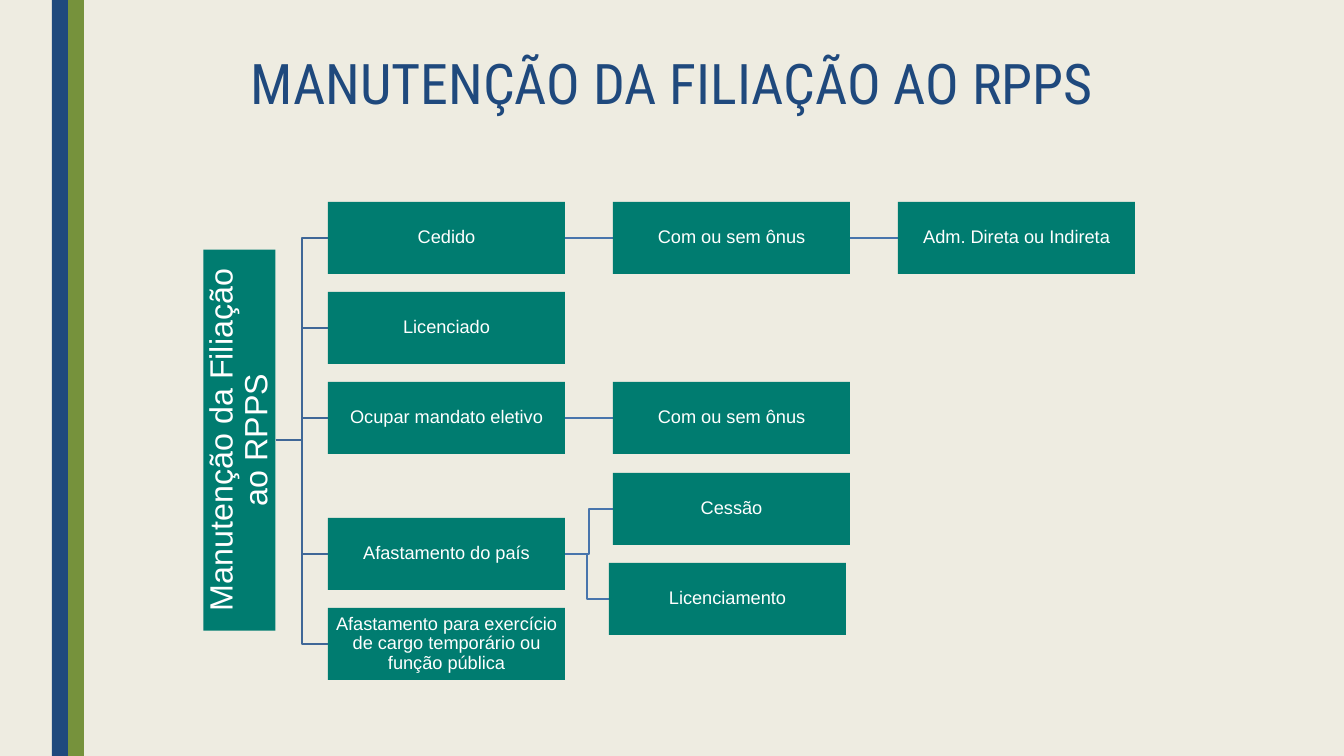
import pptx
import pptx.util
import pptx.dml.color
import pptx.enum.shapes
import pptx.enum.text

EMU_PER_PX = 914400 / 100.8
BOX_WIDTH, BOX_HEIGHT = 237, 72
FIRST_LEFT, COLUMN_PITCH = 328, 285
FIRST_TOP = 202
ROOT_RIGHT, ROOT_MIDDLE = 276, 440


def px(length):
    return pptx.util.Emu(round(length * EMU_PER_PX))


def color(hex_string):
    return pptx.dml.color.RGBColor.from_string(hex_string)


class Diagram:
    """Draws the styled elements of the tree on one slide."""

    navy, olive, teal, white = "1F497D", "76923C", "007C70", "FFFFFF"
    background = "EEECE1"
    body_font, title_font = "Arial", "Roboto Condensed"

    def __init__(self, slide):
        self.slide = slide
        slide.background.fill.solid()
        slide.background.fill.fore_color.rgb = color(self.background)

    def block(self, left, top, width, height, fill):
        block = self.slide.shapes.add_shape(
            pptx.enum.shapes.MSO_SHAPE.RECTANGLE,
            px(left), px(top), px(width), px(height))
        block.shadow.inherit = False
        block.fill.solid()
        block.fill.fore_color.rgb = color(fill)
        block.line.fill.background()
        return block

    def label(self, frame, text, size, font, hex_string, spacing):
        frame.word_wrap = True
        frame.text = text
        paragraph = frame.paragraphs[0]
        paragraph.alignment = pptx.enum.text.PP_ALIGN.CENTER
        paragraph.line_spacing = spacing
        lettering = paragraph.runs[0].font
        lettering.size = pptx.util.Pt(size)
        lettering.name = font
        lettering.color.rgb = color(hex_string)

    def title(self, text, left, top, width, height):
        heading = self.slide.shapes.add_textbox(px(left), px(top), px(width), px(height))
        self.label(heading.text_frame, text, 40, self.title_font, self.navy, 0.89)
        heading.text_frame.paragraphs[0].space_before = pptx.util.Pt(15)

    def node(self, text, left, top, width=BOX_WIDTH, height=BOX_HEIGHT,
             size=13, inset=1, rotation=0):
        node = self.block(left, top, width, height, self.teal)
        node.rotation = rotation
        frame = node.text_frame
        frame.margin_left = frame.margin_right = px(inset)
        frame.margin_top = frame.margin_bottom = px(inset)
        frame.vertical_anchor = pptx.enum.text.MSO_ANCHOR.MIDDLE
        self.label(frame, text, size, self.body_font, self.white, 0.9)

    def branch(self, start, end, hex_string):
        (x1, y1), (x2, y2) = start, end
        joint = (x1 + x2) // 2
        outline = self.slide.shapes.build_freeform(px(x1), px(y1))
        outline.add_line_segments(
            [(px(x), px(y)) for x, y in ((joint, y1), (joint, y2), end)], close=False)
        branch = outline.convert_to_shape()
        branch.shadow.inherit = False
        branch.fill.background()
        branch.line.color.rgb = color(hex_string)
        branch.line.width = pptx.util.Pt(1)


def place(column, half_row, shift=0):
    return FIRST_LEFT + column * COLUMN_PITCH + shift, FIRST_TOP + half_row * 452 // 10


def main():
    presentation = pptx.Presentation()
    presentation.slide_width, presentation.slide_height = px(1344), px(756)
    diagram = Diagram(presentation.slides.add_slide(presentation.slide_layouts[6]))

    diagram.block(68, 0, 16, 756, diagram.olive)
    diagram.block(52, 0, 16, 756, diagram.navy)

    cases = [
        ("Cedido", 0, [("Com ou sem ônus", 0, 0), ("Adm. Direta ou Indireta", 0, 0)]),
        ("Licenciado", 2, []),
        ("Ocupar mandato eletivo", 4, [("Com ou sem ônus", 4, 0)]),
        ("Afastamento do país", 7, [("Cessão", 6, 0), ("Licenciamento", 8, -4)]),
        ("Afastamento para exercício de cargo temporário ou função pública", 9, []),
    ]
    diagram.node("Manutenção da Filiação ao RPPS", 49, 404, 381, 72,
                 size=23, inset=2, rotation=270)
    for case, half_row, details in cases:
        left, top = place(0, half_row)
        middle = top + BOX_HEIGHT // 2
        diagram.branch((ROOT_RIGHT, ROOT_MIDDLE), (left, middle), "3F6797")
        diagram.node(case, left, top)
        in_sequence = all(row == half_row for _, row, _ in details)
        for order, (detail, row, shift) in enumerate(details):
            column = order + 1 if in_sequence else 1
            parent_left, parent_top = place(column - 1, half_row)
            detail_left, detail_top = place(column, row, shift)
            diagram.branch((parent_left + BOX_WIDTH, parent_top + BOX_HEIGHT // 2),
                           (detail_left, detail_top + BOX_HEIGHT // 2), "4875AC")
            diagram.node(detail, detail_left, detail_top)

    diagram.title("MANUTENÇÃO DA FILIAÇÃO AO RPPS", 143, 52, 1058, 80)
    presentation.save("out.pptx")


if __name__ == "__main__":
    main()
